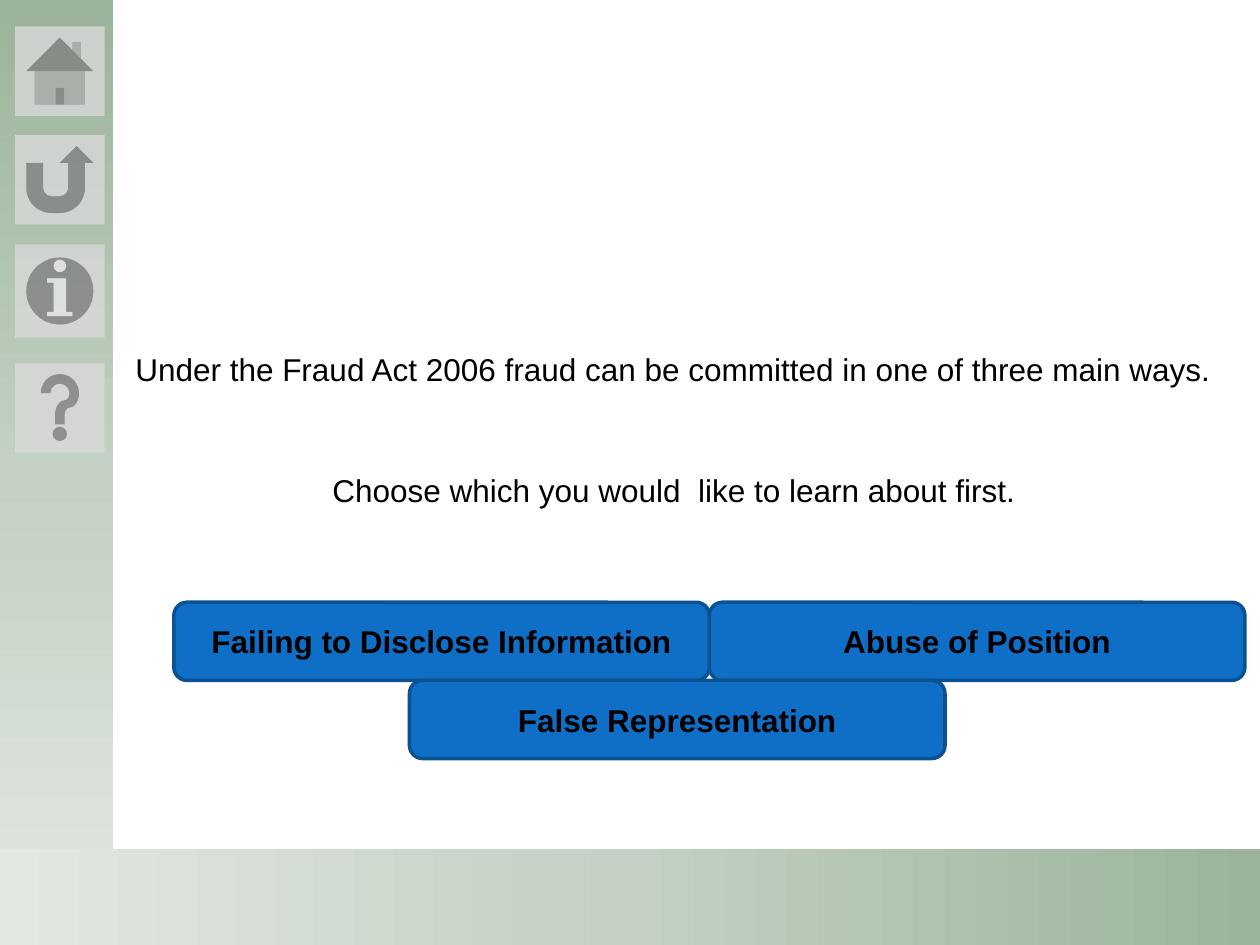
from copy import deepcopy
from dataclasses import dataclass

from lxml.etree import SubElement
from pptx import Presentation
from pptx.dml.color import RGBColor
from pptx.enum.shapes import MSO_SHAPE
from pptx.enum.text import MSO_ANCHOR, MSO_AUTO_SIZE, PP_ALIGN
from pptx.oxml.ns import qn
from pptx.util import Inches, Pt


@dataclass(frozen=True)
class Theme:
    font: str = "Arial"
    text_size: int = 18
    text: str = "000000"
    band: tuple = ((0, "9BB49B"), (0.5, "C3D0C3"), (1, "E2E8E2"))
    icon: str = "D9D9D9"
    icon_opacity: int = 80
    choice: str = "0F6FC6"
    choice_edge: str = "0B5292"
    edge_width: int = 2


THEME = Theme()
SLIDE_W, SLIDE_H = 10, 7.5
SIDEBAR_W = 0.9
FOOTER_TOP, FOOTER_H = 6.74, 0.79
ICON_LEFT, ICON_SIZE = 0.12, 0.71

# Choice grid: origin and cell size
GRID_LEFT, GRID_TOP = 1.38, 4.78
CELL_W, CELL_H = 4.25, 0.62


def color(hex_value):
    return RGBColor.from_string(hex_value)


def add_plain_shape(slide, preset, left, top, width, height):
    shape = slide.shapes.add_shape(
        preset, Inches(left), Inches(top), Inches(width), Inches(height))
    shape.shadow.inherit = False
    shape.line.fill.background()
    return shape


def add_band(slide, left, top, width, height, rotation=0):
    band = add_plain_shape(slide, MSO_SHAPE.RECTANGLE, left, top, width, height)
    band.rotation = rotation
    band.fill.gradient()
    band.fill.gradient_angle = 180
    stop_list = next(band._element.spPr.iter(qn("a:gsLst")))
    stop_list.append(deepcopy(stop_list[-1]))
    for stop, (position, shade) in zip(band.fill.gradient_stops, THEME.band):
        stop.position = position
        stop.color.rgb = color(shade)


def add_icon(slide, preset, top, height=ICON_SIZE):
    icon = add_plain_shape(slide, preset, ICON_LEFT, top, ICON_SIZE, height)
    icon.fill.solid()
    icon.fill.fore_color.rgb = color(THEME.icon)
    tint = next(icon._element.spPr.iter(qn("a:srgbClr")))
    SubElement(tint, qn("a:alpha"), val=str(THEME.icon_opacity * 1000))


def write_text(frame, wording, align, bold=False):
    frame.text = wording
    paragraph = frame.paragraphs[0]
    paragraph.alignment = align
    font = paragraph.runs[0].font
    font.name, font.size, font.bold = THEME.font, Pt(THEME.text_size), bold
    font.color.rgb = color(THEME.text)


def add_sentence(slide, wording, left, top, width, align, wrap):
    sentence = slide.shapes.add_textbox(
        Inches(left), Inches(top), Inches(width), Inches(0.4))
    frame = sentence.text_frame
    frame.word_wrap = wrap
    frame.auto_size = MSO_AUTO_SIZE.SHAPE_TO_FIT_TEXT
    write_text(frame, wording, align)


def add_choice(slide, wording, column, row):
    choice = add_plain_shape(
        slide, MSO_SHAPE.ROUNDED_RECTANGLE,
        GRID_LEFT + column * CELL_W, GRID_TOP + row * CELL_H, CELL_W, CELL_H)
    choice.fill.solid()
    choice.fill.fore_color.rgb = color(THEME.choice)
    choice.line.color.rgb = color(THEME.choice_edge)
    choice.line.width = Pt(THEME.edge_width)
    choice.text_frame.vertical_anchor = MSO_ANCHOR.MIDDLE
    write_text(choice.text_frame, wording, PP_ALIGN.CENTER, bold=True)


def main():
    deck = Presentation()
    deck.slide_width, deck.slide_height = Inches(SLIDE_W), Inches(SLIDE_H)
    slide = deck.slides.add_slide(deck.slide_layouts[6])

    # Sidebar, turned upright about its centre, and footer
    add_band(slide, (SIDEBAR_W - SLIDE_H) / 2, (SLIDE_H - SIDEBAR_W) / 2,
             SLIDE_H, SIDEBAR_W, rotation=270)
    add_band(slide, 0, FOOTER_TOP, SLIDE_W, FOOTER_H)

    # Navigation
    add_icon(slide, MSO_SHAPE.ACTION_BUTTON_HOME, 0.21)
    add_icon(slide, MSO_SHAPE.ACTION_BUTTON_RETURN, 1.07)
    add_icon(slide, MSO_SHAPE.ACTION_BUTTON_INFORMATION, 1.94, height=0.74)
    add_icon(slide, MSO_SHAPE.ACTION_BUTTON_HELP, 2.88)

    # Introduction
    add_sentence(
        slide,
        "Under the Fraud Act 2006 fraud can be committed in one of three main ways.",
        0.95, 2.73, 8.78, PP_ALIGN.CENTER, wrap=True)
    add_sentence(slide, "Choose which you would  like to learn about first.",
                 2.54, 3.69, 5.67, PP_ALIGN.LEFT, wrap=False)

    # Choices: two side by side, the third below and between them
    add_choice(slide, "Failing to Disclose Information", 0, 0)
    add_choice(slide, "Abuse of Position", 1, 0)
    add_choice(slide, "False Representation", 0.44, 1)

    deck.save("out.pptx")


if __name__ == "__main__":
    main()
